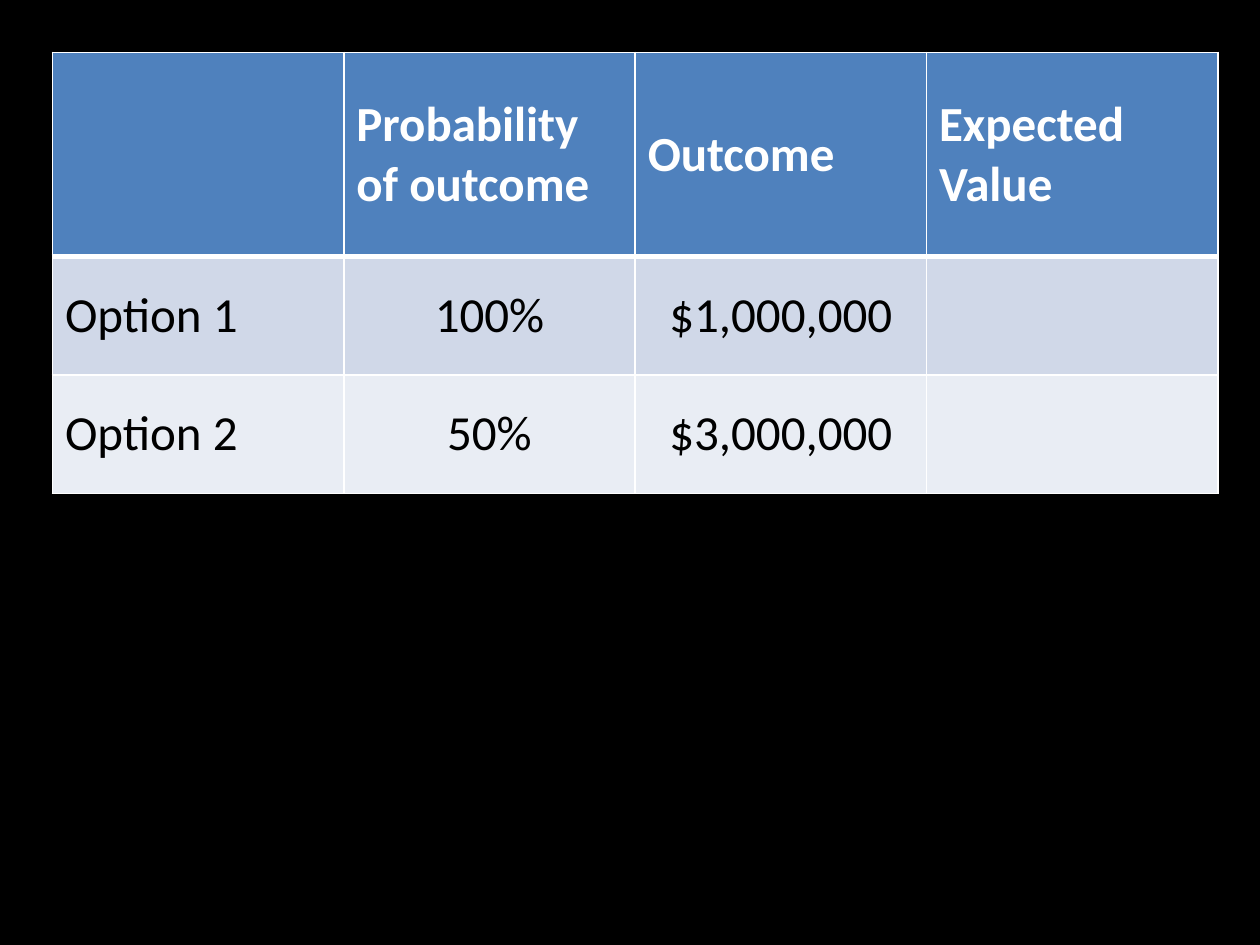
from lxml.etree import SubElement
from pptx import Presentation
from pptx.dml.color import RGBColor
from pptx.enum.text import MSO_ANCHOR, PP_ALIGN
from pptx.oxml.ns import qn
from pptx.util import Pt

# Content
ROWS = [
    ("", "Probability of outcome", "Outcome", "Expected Value"),
    ("Option 1", "100%", "$1,000,000", ""),
    ("Option 2", "50%", "$3,000,000", ""),
]

# Layout in points, one entry per row where rows differ
LEFT, TOP, COLUMN_WIDTH = 30, 30, 166.5
ROW_HEIGHTS = [116.64, 67.68, 67.68]
ROW_FILLS = ["4F81BD", "D0D8E8", "E9EDF4"]
RULE_WIDTHS = [1, 3, 1, 1]  # horizontal rules, top to bottom
WHITE, BLACK = "FFFFFF", "000000"


def paint(fill, color):
    fill.solid()
    fill.fore_color.rgb = RGBColor.from_string(color)


def add_borders(cell, top, bottom):
    properties = cell._tc.get_or_add_tcPr()
    for side, width in (("L", 1), ("R", 1), ("T", top), ("B", bottom)):
        line = SubElement(properties, qn(f"a:ln{side}"), w=str(Pt(width)))
        fill = SubElement(line, qn("a:solidFill"))
        SubElement(fill, qn("a:srgbClr"), val=WHITE)


# Slide
presentation = Presentation()
presentation.slide_width, presentation.slide_height = Pt(720), Pt(540)
slide = presentation.slides.add_slide(presentation.slide_layouts[6])
paint(slide.background.fill, BLACK)

# Table
column_count = len(ROWS[0])
table = slide.shapes.add_table(
    len(ROWS), column_count, Pt(LEFT), Pt(TOP),
    Pt(COLUMN_WIDTH * column_count), Pt(sum(ROW_HEIGHTS)),
).table
for column in table.columns:
    column.width = Pt(COLUMN_WIDTH)

for row_index, texts in enumerate(ROWS):
    table.rows[row_index].height = Pt(ROW_HEIGHTS[row_index])
    is_header = row_index == 0
    for column_index, text in enumerate(texts):
        cell = table.cell(row_index, column_index)
        add_borders(cell, *RULE_WIDTHS[row_index:row_index + 2])
        paint(cell.fill, ROW_FILLS[row_index])
        cell.vertical_anchor = MSO_ANCHOR.MIDDLE
        cell.text = text
        paragraph = cell.text_frame.paragraphs[0]
        centred = not is_header and column_index > 0
        paragraph.alignment = PP_ALIGN.CENTER if centred else PP_ALIGN.LEFT
        font = paragraph.font
        font.name, font.size, font.bold = "Calibri", Pt(28), is_header
        paint(font.fill, WHITE if is_header else BLACK)

presentation.save("out.pptx")
